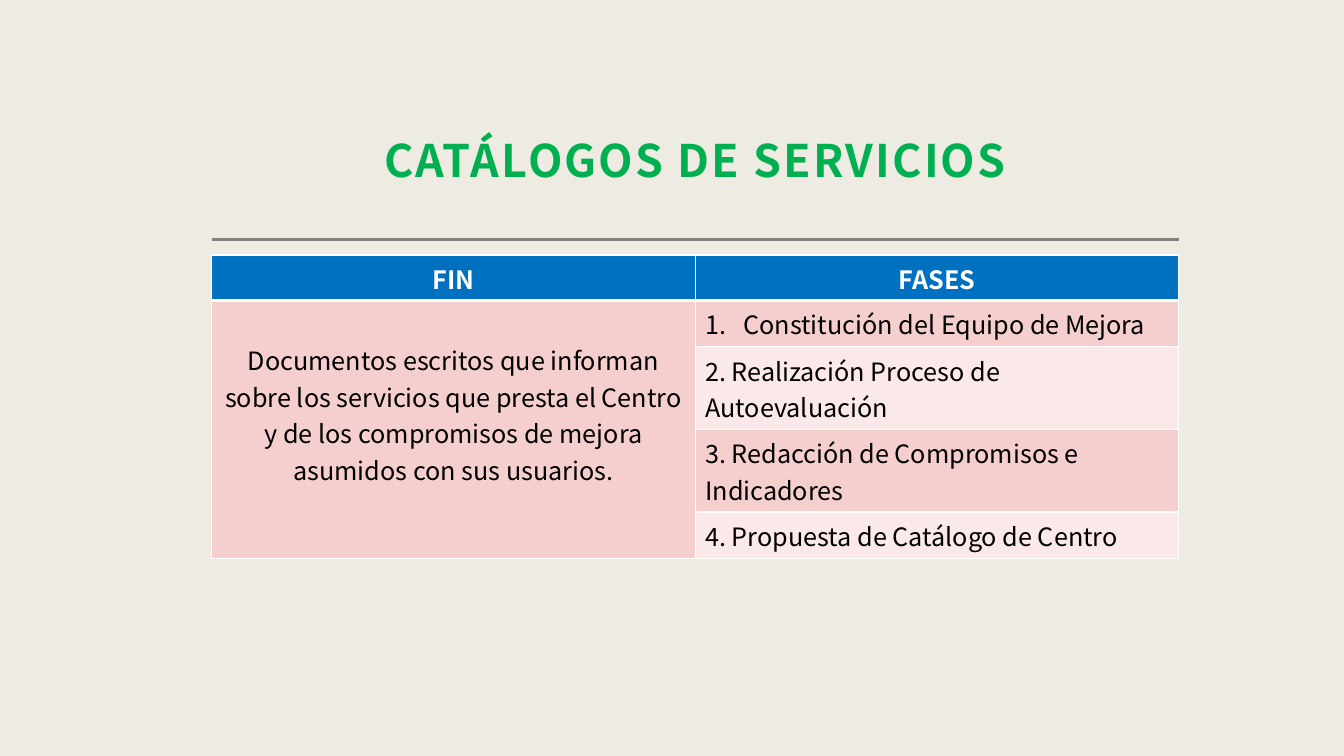
"""Builds the slide on service catalogues: a title, a rule and a table of aim and phases."""
from lxml import etree
from pptx import Presentation
from pptx.dml.color import RGBColor
from pptx.enum.shapes import MSO_CONNECTOR
from pptx.enum.text import MSO_ANCHOR, PP_ALIGN
from pptx.oxml.ns import qn
from pptx.util import Inches, Pt

FONT = "Noto Sans CJK JP"
TITLE = "CATÁLOGOS DE SERVICIOS"
HEADERS = ["FIN", "FASES"]
AIM = ("Documentos escritos que informan sobre los servicios que presta el Centro "
       "y de los compromisos de mejora asumidos con sus usuarios.")
PHASES = [
    "Constitución del Equipo de Mejora",
    "2. Realización Proceso de Autoevaluación",
    "3. Redacción de Compromisos e Indicadores",
    "4. Propuesta de Catálogo de Centro",
]
BANDS = ["F5CFCE", "FAE9E8"]
LEFT, WIDTH = 2.1, 9.59
TITLE_TOP, TITLE_H = 0.48, 1.47
RULE_Y, TABLE_TOP = 2.38, 2.53
ROW_H = [0.45, 0.46, 0.82, 0.82, 0.46]
AIM_TOP_MARGIN = 0.41
NUMBER_INDENT = 0.38


def rgb(value):
    return RGBColor.from_string(value)


def add_run(p, text, size, color, bold=False):
    r = p.add_run()
    r.text = text
    r.font.name, r.font.size, r.font.bold = FONT, Pt(size), bold
    r.font.color.rgb = rgb(color)
    return r


def set_borders(cell, top=1, bottom=1):
    tcPr = cell._tc.get_or_add_tcPr()
    widths = {"lnL": 1, "lnR": 1, "lnT": top, "lnB": bottom}
    for i, (tag, width) in enumerate(widths.items()):
        ln = etree.Element(qn("a:" + tag), w=str(Pt(width)))
        fill = etree.SubElement(ln, qn("a:solidFill"))
        etree.SubElement(fill, qn("a:srgbClr"), val="FFFFFF")
        tcPr.insert(i, ln)


def fill_cell(cell, text, fill, color="000000", bold=False, align=PP_ALIGN.LEFT):
    cell.fill.solid()
    cell.fill.fore_color.rgb = rgb(fill)
    p = cell.text_frame.paragraphs[0]
    p.alignment = align
    if text:
        add_run(p, text, 18, color, bold)
    return p


def number_paragraph(p):
    pPr = p._p.get_or_add_pPr()
    pPr.set("marL", str(Inches(NUMBER_INDENT)))
    pPr.set("indent", str(-Inches(NUMBER_INDENT)))
    etree.SubElement(pPr, qn("a:buFont"), typeface=FONT)
    etree.SubElement(pPr, qn("a:buAutoNum"), type="arabicPeriod")


def add_title(slide):
    sp = slide.shapes.add_textbox(Inches(LEFT), Inches(TITLE_TOP), Inches(WIDTH), Inches(TITLE_H))
    tf = sp.text_frame
    tf.word_wrap = True
    tf.vertical_anchor = MSO_ANCHOR.BOTTOM
    tf.margin_left = tf.margin_right = tf.margin_top = Inches(0.12)
    tf.margin_bottom = Inches(0.1)
    p = tf.paragraphs[0]
    p.alignment, p.line_spacing = PP_ALIGN.CENTER, 1.3
    r = add_run(p, TITLE, 32, "00B050", True)
    r.font._element.set("spc", "150")


def add_rule(slide):
    y = Inches(RULE_Y)
    line = slide.shapes.add_connector(
        MSO_CONNECTOR.STRAIGHT, Inches(LEFT), y, Inches(LEFT + WIDTH), y)
    line.line.color.rgb = rgb("808080")
    line.line.width = Pt(2)
    etree.SubElement(line._element.spPr, qn("a:effectLst"))


def add_phase_table(slide):
    frame = slide.shapes.add_table(
        len(ROW_H), len(HEADERS), Inches(LEFT), Inches(TABLE_TOP), Inches(WIDTH), Inches(sum(ROW_H)))
    table = frame.table
    for column in table.columns:
        column.width = Inches(WIDTH / len(HEADERS))
    for row, height in zip(table.rows, ROW_H):
        row.height = Inches(height)
    for c, header in enumerate(HEADERS):
        fill_cell(table.cell(0, c), header, "0070C0", "FFFFFF", True, PP_ALIGN.CENTER)
    for i, phase in enumerate(PHASES):
        fill_cell(table.cell(i + 1, 0), "" if i else AIM, BANDS[0], align=PP_ALIGN.CENTER)
        p = fill_cell(table.cell(i + 1, 1), phase, BANDS[i % 2])
        if i == 0:
            number_paragraph(p)
    for i, row in enumerate(table.rows):
        for cell in row.cells:
            set_borders(cell, top=3 if i == 1 else 1, bottom=3 if i == 0 else 1)
    aim = table.cell(1, 0)
    aim.margin_top = Inches(AIM_TOP_MARGIN)
    aim.merge(table.cell(len(PHASES), 0))


def main():
    prs = Presentation()
    prs.slide_width, prs.slide_height = Inches(13.33), Inches(7.5)
    slide = prs.slides.add_slide(prs.slide_layouts[6])
    slide.background.fill.solid()
    slide.background.fill.fore_color.rgb = rgb("EEEBE2")
    add_rule(slide)
    add_title(slide)
    add_phase_table(slide)
    prs.save("out.pptx")


if __name__ == "__main__":
    main()
